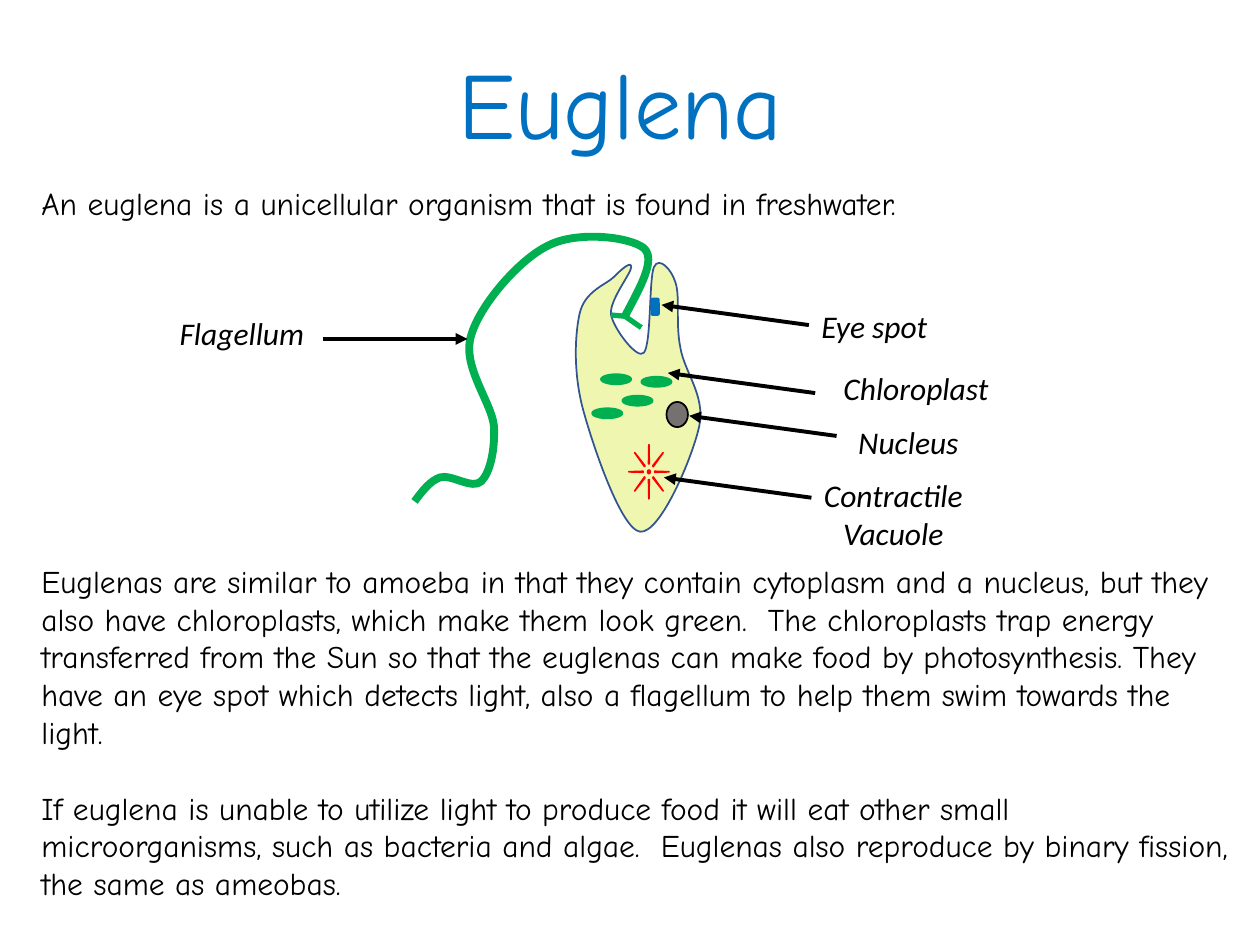
from dataclasses import dataclass

from lxml.etree import SubElement
from pptx import Presentation
from pptx.dml.color import RGBColor
from pptx.enum.shapes import MSO_CONNECTOR, MSO_SHAPE
from pptx.enum.text import PP_ALIGN
from pptx.oxml.ns import qn
from pptx.util import Inches, Pt

BLACK = RGBColor(0x00, 0x00, 0x00)
BLUE = RGBColor(0x00, 0x70, 0xC0)
GREEN = RGBColor(0x00, 0xB0, 0x50)
RED = RGBColor(0xFF, 0x00, 0x00)
GREY = RGBColor(0x76, 0x71, 0x71)
CYTOPLASM = RGBColor(0xEE, 0xF6, 0xB0)
MEMBRANE = RGBColor(0x32, 0x54, 0x91)
VACUOLE_FILL = RGBColor(0x44, 0x72, 0xC4)

BODY_LINE = 21.6  # height of one line of body text, in points

# Each outline has its area, a start point and Bezier segments (two controls, end).
CELL_AREA = (357, 59, 99, 213)
CELL_START = (387, 70)
CELL_CURVES = [
    ((381, 76), (364, 81), (360, 99)),
    ((356, 117), (355, 147), (363, 176)),
    ((371, 205), (393, 270), (408, 272)),
    ((424, 274), (450, 212), (455, 188)),
    ((460, 164), (443, 145), (440, 126)),
    ((436, 107), (440, 85), (436, 74)),
    ((433, 64), (423, 53), (419, 62)),
    ((415, 71), (417, 123), (411, 130)),
    ((406, 136), (387, 111), (385, 100)),
    ((383, 89), (401, 67), (401, 62)),
    ((401, 57), (394, 63), (387, 70)),
]
FLAGELLUM_AREA = (229, 38, 185, 210)
FLAGELLUM_START = (396, 101)
FLAGELLUM_CURVES = [
    ((408, 78), (421, 56), (411, 47)),
    ((400, 38), (358, 33), (335, 45)),
    ((312, 56), (281, 92), (274, 116)),
    ((266, 140), (290, 169), (292, 188)),
    ((293, 207), (289, 225), (282, 232)),
    ((275, 239), (258, 226), (249, 229)),
    ((241, 232), (235, 240), (229, 248)),
]
FLAGELLUM_ROOTS = [(409, 110), (385, 100)]
CHLOROPLASTS = [(377, 147), (394, 164), (409, 149), (370, 174)]

LABELS = [  # wording, left, top, width, height, alignment
    ("Eye spot", 542, 89, 123, 40, PP_ALIGN.LEFT),
    ("Chloroplast", 549, 138, 156, 40, PP_ALIGN.CENTER),
    ("Nucleus", 561, 181, 120, 40, PP_ALIGN.CENTER),
    ("Contractile Vacuole", 533, 223, 152, 71, PP_ALIGN.CENTER),
    ("Flagellum", 24, 94, 136, 40, PP_ALIGN.CENTER),
]
RIGHT_TIPS = [(425, 92), (447, 180), (430, 146), (427, 229)]
POINTER_RUN, POINTER_DROP = 117, 16


@dataclass
class Box:
    """An area of the slide in inches, divided into a grid."""
    left: float
    top: float
    width: float
    height: float
    columns: int = 1
    rows: int = 1

    def point(self, column, row):
        return (Inches(self.left + column * self.width / self.columns),
                Inches(self.top + row * self.height / self.rows))

    def frame(self, column=0, row=0, across=1, down=1):
        left, top = self.point(column, row)
        right, bottom = self.point(column + across, row + down)
        return left, top, right - left, bottom - top


def style_line(line, color, width):
    line.color.rgb = color
    line.width = Pt(width)


def add_text(slide, frame, paragraphs, font_name, size, color=BLACK,
             align=PP_ALIGN.LEFT, italic=False):
    """Add a wrapped text box; paragraphs pairs wording with space before."""
    text_frame = slide.shapes.add_textbox(*frame).text_frame
    text_frame.word_wrap = True
    for index, (wording, gap) in enumerate(paragraphs):
        paragraph = text_frame.add_paragraph() if index else text_frame.paragraphs[0]
        paragraph.text = wording
        paragraph.alignment = align
        paragraph.space_before = Pt(gap)
        font = paragraph.runs[0].font
        font.name, font.size, font.italic = font_name, Pt(size), italic
        font.color.rgb = color


def add_organelle(slide, preset, frame, fill, outline):
    organelle = slide.shapes.add_shape(preset, *frame)
    organelle.shadow.inherit = False
    organelle.fill.solid()
    organelle.fill.fore_color.rgb = fill
    style_line(organelle.line, outline, 1)
    return organelle


def add_line(slide, start, end, color, width, arrow=False):
    connector = slide.shapes.add_connector(MSO_CONNECTOR.STRAIGHT, *start, *end)
    style_line(connector.line, color, width)
    if arrow:
        SubElement(connector.line._get_or_add_ln(), qn("a:tailEnd"), type="triangle")
    SubElement(connector._element.spPr, qn("a:effectLst"))


def add_outline(slide, box, area, start, curves, color, width, fill=None):
    """Add a freeform and bend its straight segments into Bezier curves."""
    builder = slide.shapes.build_freeform(*box.point(*start))
    builder.add_line_segments([box.point(*curve[-1]) for curve in curves], close=False)
    outline = builder.convert_to_shape()
    frame = left, top, across, down = box.frame(*area)
    outline.left, outline.top, outline.width, outline.height = frame

    outline_path = outline._element.find(".//" + qn("a:path"))
    outline_path.clear()
    outline_path.set("w", str(across))
    outline_path.set("h", str(down))
    commands = [("a:moveTo", [start])] + [("a:cubicBezTo", curve) for curve in curves]
    for command, points in commands:
        segment = SubElement(outline_path, qn(command))
        for x, y in (box.point(*point) for point in points):
            SubElement(segment, qn("a:pt"), x=str(x - left), y=str(y - top))

    outline.shadow.inherit = False
    style_line(outline.line, color, width)
    if fill is None:
        outline.fill.background()
    else:
        SubElement(outline_path, qn("a:close"))
        outline.fill.solid()
        outline.fill.fore_color.rgb = fill


def add_title(slide, box):
    add_text(slide, box.frame(), [("Euglena", 0)], "Comic Neue", 54, BLUE, PP_ALIGN.CENTER)


def add_body(slide, box):
    add_text(slide, box.frame(), [
        ("An euglena is a unicellular organism that is found in freshwater.", 0),
        ("Euglenas are similar to amoeba in that they contain cytoplasm and a nucleus, "
         "but they also have chloroplasts, which make them look green.  The chloroplasts "
         "trap energy transferred from the Sun so that the euglenas can make food by "
         "photosynthesis. They have an eye spot which detects light, also a flagellum to "
         "help them swim towards the light.", 9 * BODY_LINE),
        ("If euglena is unable to utilize light to produce food it will eat other small "
         "microorganisms, such as bacteria and algae.  Euglenas also reproduce by binary "
         "fission, the same as ameobas.", BODY_LINE),
    ], "Comic Neue", 18)


def add_organism(slide, box):
    add_outline(slide, box, CELL_AREA, CELL_START, CELL_CURVES, MEMBRANE, 1, CYTOPLASM)
    add_outline(slide, box, FLAGELLUM_AREA, FLAGELLUM_START, FLAGELLUM_CURVES, GREEN, 4.5)
    for root in FLAGELLUM_ROOTS:
        add_line(slide, box.point(*FLAGELLUM_START), box.point(*root), GREEN, 3)
    for column, row in CHLOROPLASTS:
        add_organelle(slide, MSO_SHAPE.OVAL, box.frame(column, row, 24, 8), GREEN, GREEN)
    vacuole = add_organelle(slide, MSO_SHAPE.SUN, box.frame(399, 203, 32, 43),
                            VACUOLE_FILL, RED)
    vacuole.adjustments[0] = 0.469
    add_organelle(slide, MSO_SHAPE.OVAL, box.frame(429, 169, 17, 20), GREY, BLACK)
    add_organelle(slide, MSO_SHAPE.ROUNDED_RECTANGLE, box.frame(417, 87, 6, 13), BLUE, BLUE)


def add_labels(slide, box):
    pointers = [((x + POINTER_RUN, y + POINTER_DROP), (x, y)) for x, y in RIGHT_TIPS]
    pointers.append(((156, 119), (271, 119)))
    for start, tip in pointers:
        add_line(slide, box.point(*start), box.point(*tip), BLACK, 2.25, arrow=True)
    for wording, *area, align in LABELS:
        add_text(slide, box.frame(*area), [(wording, 0)], "Calibri", 18,
                 align=align, italic=True)


def main():
    presentation = Presentation()
    presentation.slide_width, presentation.slide_height = Inches(10), Inches(7.5)
    slide = presentation.slides.add_slide(presentation.slide_layouts[6])
    diagram = Box(1, 1.5, 7.2, 3, columns=720, rows=300)
    add_title(slide, Box(0.21, 0.31, 9.43, 1.01))
    add_body(slide, Box(0.23, 1.41, 9.62, 5.86))
    add_organism(slide, diagram)
    add_labels(slide, diagram)
    presentation.save("out.pptx")


if __name__ == "__main__":
    main()
